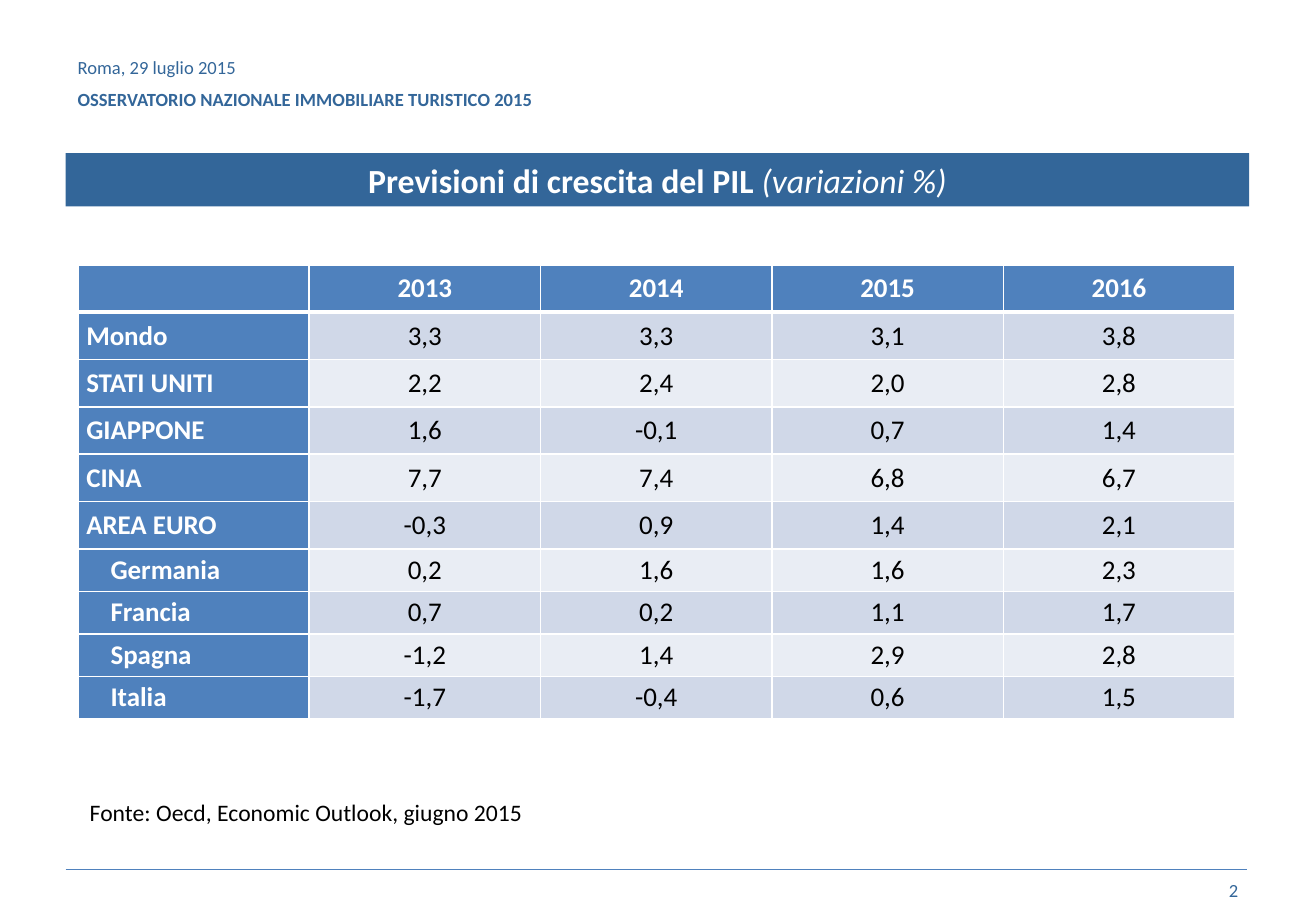
from dataclasses import dataclass

from lxml.etree import SubElement
from pptx import Presentation
from pptx.dml.color import RGBColor
from pptx.enum.shapes import MSO_CONNECTOR
from pptx.enum.text import MSO_ANCHOR, MSO_AUTO_SIZE, PP_ALIGN
from pptx.oxml import parse_xml
from pptx.oxml.ns import nsdecls, qn
from pptx.util import Inches, Pt


@dataclass(frozen=True)
class Theme:
    font: str = "Calibri"
    navy: str = "336699"
    blue: str = "4F81BD"
    white: str = "FFFFFF"
    black: str = "000000"
    bands: tuple = ("D0D8E8", "E9EDF4")
    title_size: int = 20
    table_size: int = 16
    source_size: int = 14
    small_size: int = 11


YEARS = ["", "2013", "2014", "2015", "2016"]
FORECASTS = [
    ["Mondo", "3,3", "3,3", "3,1", "3,8"],
    ["STATI UNITI", "2,2", "2,4", "2,0", "2,8"],
    ["GIAPPONE", "1,6", "-0,1", "0,7", "1,4"],
    ["CINA", "7,7", "7,4", "6,8", "6,7"],
    ["AREA EURO", "-0,3", "0,9", "1,4", "2,1"],
    ["Germania", "0,2", "1,6", "1,6", "2,3"],
    ["Francia", "0,7", "0,2", "1,1", "1,7"],
    ["Spagna", "-1,2", "1,4", "2,9", "2,8"],
    ["Italia", "-1,7", "-0,4", "0,6", "1,5"],
]
FIRST_COUNTRY_ROW = 6


class SlideBuilder:
    def __init__(self, slide, theme):
        self.slide = slide
        self.theme = theme

    def style(self, run, size, color, bold=False, italic=False):
        run.font.name = self.theme.font
        run.font.size = Pt(size)
        run.font.color.rgb = RGBColor.from_string(color)
        run.font.bold = bold
        run.font.italic = italic

    def title(self, text, note, left, top, width, height):
        shape = self.slide.shapes.title
        shape.left, shape.top = Inches(left), Inches(top)
        shape.width, shape.height = Inches(width), Inches(height)
        shape.fill.solid()
        shape.fill.fore_color.rgb = RGBColor.from_string(self.theme.navy)
        frame = shape.text_frame
        frame.auto_size = MSO_AUTO_SIZE.NONE
        frame.vertical_anchor = MSO_ANCHOR.MIDDLE
        frame.text = text
        paragraph = frame.paragraphs[0]
        paragraph.alignment = PP_ALIGN.CENTER
        paragraph.add_run().text = note
        main_run, note_run = paragraph.runs
        self.style(main_run, self.theme.title_size, self.theme.white, bold=True)
        self.style(note_run, self.theme.title_size, self.theme.white, italic=True)

    def text(self, lines, left, top, width, height, size, color,
             alignment=PP_ALIGN.LEFT, anchor=MSO_ANCHOR.MIDDLE):
        box = self.slide.shapes.add_textbox(
            Inches(left), Inches(top), Inches(width), Inches(height))
        frame = box.text_frame
        frame.word_wrap = True
        frame.vertical_anchor = anchor
        frame.text = "\n".join(lines)
        for index, paragraph in enumerate(frame.paragraphs):
            paragraph.alignment = alignment
            if index:
                paragraph.space_before = Pt(6)
            for run in paragraph.runs:
                self.style(run, size, color, bold=index > 0)

    def rule(self, left, right, y):
        line = self.slide.shapes.add_connector(
            MSO_CONNECTOR.STRAIGHT, Inches(left), Inches(y), Inches(right), Inches(y))
        line.line.color.rgb = RGBColor.from_string(self.theme.blue)
        line.line.width = Pt(0.25)
        SubElement(line._element.spPr, qn("a:effectLst"))

    def borders(self, cell, row):
        widths = {"L": 1, "R": 1, "T": 3 if row == 1 else 1, "B": 3 if row == 0 else 1}
        properties = cell._tc.get_or_add_tcPr()
        for index, (side, width) in enumerate(widths.items()):
            properties.insert(index, parse_xml(
                f'<a:ln{side} {nsdecls("a")} w="{Pt(width)}"><a:solidFill>'
                f'<a:srgbClr val="{self.theme.white}"/></a:solidFill></a:ln{side}>'))

    def table(self, rows, left, top, width, heights):
        table = self.slide.shapes.add_table(
            len(rows), len(rows[0]), Inches(left), Inches(top),
            Inches(width), Inches(sum(heights))).table
        for row_index, values in enumerate(rows):
            table.rows[row_index].height = Inches(heights[row_index])
            for column_index, value in enumerate(values):
                self.cell(table.cell(row_index, column_index), value,
                          row_index, column_index)

    def cell(self, cell, value, row, column):
        theme = self.theme
        heading = row == 0 or column == 0
        indented = column == 0 and row >= FIRST_COUNTRY_ROW
        cell.margin_left = Inches(0.27 if indented else 0.07)
        cell.margin_right = Inches(0.07)
        cell.margin_top = cell.margin_bottom = 0
        cell.vertical_anchor = MSO_ANCHOR.MIDDLE
        cell.fill.solid()
        cell.fill.fore_color.rgb = RGBColor.from_string(
            theme.blue if heading else theme.bands[(row - 1) % 2])
        self.borders(cell, row)
        if value:
            cell.text_frame.text = value
            paragraph = cell.text_frame.paragraphs[0]
            paragraph.alignment = PP_ALIGN.CENTER if column else PP_ALIGN.LEFT
            self.style(paragraph.runs[0], theme.table_size,
                       theme.white if heading else theme.black, bold=heading)


def main():
    theme = Theme()
    presentation = Presentation()
    presentation.slide_width = Inches(10.83)
    presentation.slide_height = Inches(7.5)
    slide = presentation.slides.add_slide(presentation.slide_layouts[5])
    builder = SlideBuilder(slide, theme)

    builder.rule(0.54, 10.26, 7.16)
    builder.text(["Roma, 29 luglio 2015",
                  "OSSERVATORIO NAZIONALE IMMOBILIARE TURISTICO 2015"],
                 0.54, 0.3, 8.03, 0.77, theme.small_size, theme.navy)
    builder.title("Previsioni di crescita del PIL ", "(variazioni %)",
                  0.54, 1.26, 9.74, 0.44)
    builder.table([YEARS] + FORECASTS, 0.64, 2.18, 9.52,
                  [0.39] * FIRST_COUNTRY_ROW + [0.35] * 4)
    builder.text(["Fonte: Oecd, Economic Outlook, giugno 2015"],
                 0.64, 6.52, 8.45, 0.34, theme.source_size, theme.black,
                 anchor=MSO_ANCHOR.TOP)
    builder.text(["2"], 7.76, 7.13, 2.53, 0.4, theme.small_size, theme.navy,
                 alignment=PP_ALIGN.RIGHT)
    presentation.save("out.pptx")


if __name__ == "__main__":
    main()
